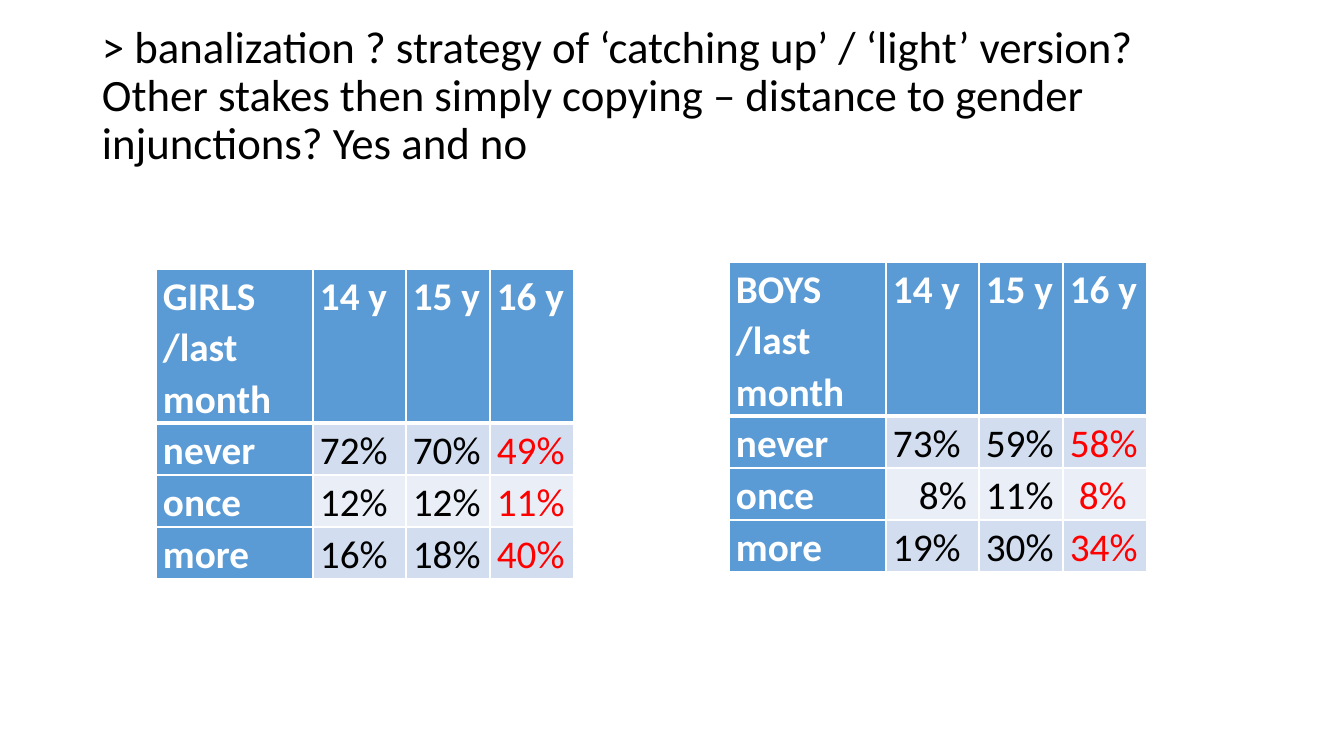
from lxml.etree import SubElement
from pptx import Presentation
from pptx.dml.color import RGBColor
from pptx.enum.text import MSO_ANCHOR
from pptx.oxml.ns import qn
from pptx.util import Pt

PX = 9071  # EMU per px, at 100.8 px to the inch
WHITE, BLACK, RED, BLUE = "FFFFFF", "000000", "FF0000", "5B9BD5"
BANDS = ["D2DEEF", "EAEFF7"]
COLUMN_WIDTHS = [157, 93, 84, 84]
ROW_HEIGHTS = [154, 52, 52, 52]
INSET = 7


def color(hex_string):
    return RGBColor.from_string(hex_string)


def add_borders(cell, widths):
    """Draw white left, right, top and bottom borders, widths in points."""
    properties = cell._tc.get_or_add_tcPr()
    for side, width in zip("LRTB", widths):
        line = SubElement(properties, qn(f"a:ln{side}"), w=str(Pt(width)))
        SubElement(SubElement(line, qn("a:solidFill")), qn("a:srgbClr"), val=WHITE)


presentation = Presentation()
presentation.slide_width = 1344 * PX
presentation.slide_height = 756 * PX
slide = presentation.slides.add_slide(presentation.slide_layouts[6])

title = slide.shapes.add_textbox(92 * PX, 20 * PX, 1159 * PX, 154 * PX).text_frame
title.word_wrap = True
title.vertical_anchor = MSO_ANCHOR.MIDDLE
title.text = (
    "> banalization ? strategy of ‘catching up’ / ‘light’ version? "
    "Other stakes then simply copying – distance to gender injunctions? Yes and no"
)
question = title.paragraphs[0]
question.line_spacing = 0.9
question.font.name = "Calibri"
question.font.size = Pt(32)
question.font.color.rgb = color(BLACK)

ages = ["14 y", "15 y", "16 y"]
boys = [
    ["BOYS\n/last month", *ages],
    ["never", "73%", "59%", "58%"],
    ["once", "8%", "11%", "8%"],
    ["more", "19%", "30%", "34%"],
]
girls = [
    ["GIRLS\n/last month", *ages],
    ["never", "72%", "70%", "49%"],
    ["once", "12%", "12%", "11%"],
    ["more", "16%", "18%", "40%"],
]
# Extra left inset of the one-digit shares, by column
one_digit_indents = {1: 26, 3: 9}

for answers, left, top in [(boys, 729, 262), (girls, 156, 269)]:
    table = slide.shapes.add_table(
        len(ROW_HEIGHTS), len(COLUMN_WIDTHS), left * PX, top * PX,
        sum(COLUMN_WIDTHS) * PX, sum(ROW_HEIGHTS) * PX,
    ).table
    table.first_col = True
    for column, width in zip(table.columns, COLUMN_WIDTHS):
        column.width = width * PX
    for row, height in zip(table.rows, ROW_HEIGHTS):
        row.height = height * PX

    for r, answer_row in enumerate(answers):
        for c, answer in enumerate(answer_row):
            cell = table.cell(r, c)
            heading = r == 0 or c == 0
            indent = one_digit_indents[c] if answer == "8%" else 0
            cell.margin_left = (INSET + indent) * PX
            cell.margin_right = INSET * PX
            cell.margin_top = PX
            cell.margin_bottom = 0
            add_borders(cell, [1, 1, 3 if r == 1 else 1, 3 if r == 0 else 1])
            cell.fill.solid()
            cell.fill.fore_color.rgb = color(BLUE if heading else BANDS[(r - 1) % 2])
            cell.text = answer
            for paragraph in cell.text_frame.paragraphs:
                paragraph.line_spacing = 1.07
                paragraph.font.name = "Calibri"
                paragraph.font.size = Pt(28)
                paragraph.font.bold = heading
                paragraph.font.color.rgb = color(
                    WHITE if heading else RED if c == 3 else BLACK
                )

presentation.save("out.pptx")
